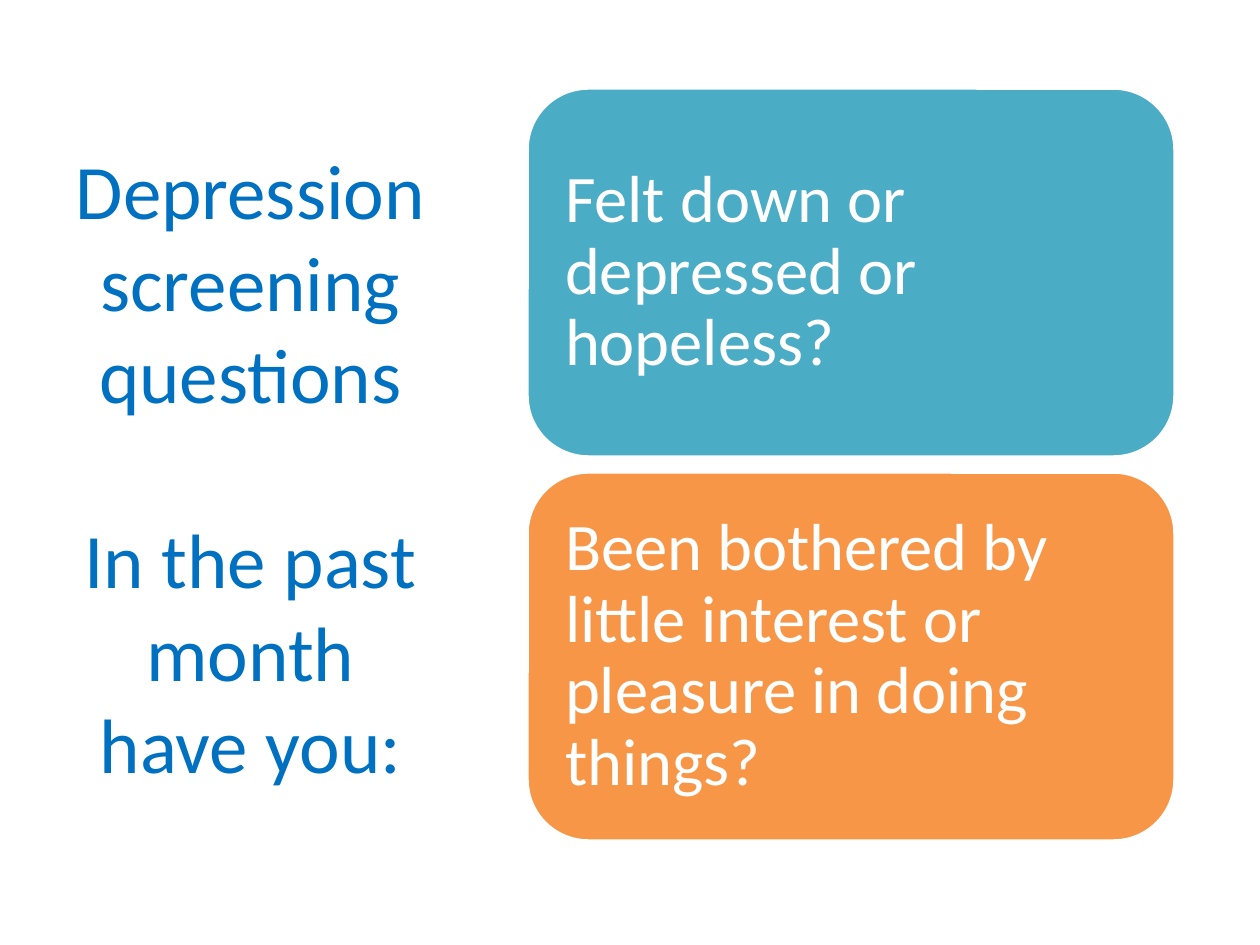
"""Build the depression screening questions slide."""
from dataclasses import dataclass

from pptx import Presentation
from pptx.dml.color import RGBColor
from pptx.enum.shapes import MSO_SHAPE
from pptx.enum.text import MSO_ANCHOR, MSO_AUTO_SIZE, PP_ALIGN
from pptx.slide import Slide
from pptx.text.text import TextFrame, _Paragraph
from pptx.util import Emu, Pt

EMU_PER_PX = 914400 / 126
FONT = "Calibri"
COLORS = {"title": "0070C0", "teal": "4BACC6", "orange": "F79646", "white": "FFFFFF"}
TITLE_LINES = ["Depression screening questions", "In the past month have you:"]
CARD_LEFT, CARD_TOP, CARD_WIDTH, CARD_HEIGHT, CARD_GAP = 527, 88, 648, 369, 15


@dataclass(frozen=True)
class QuestionCard:
    text: str
    color: str


CARDS = [
    QuestionCard("Felt down or depressed or hopeless?", "teal"),
    QuestionCard("Been bothered by little interest or pleasure in doing things?", "orange"),
]


def px(length: int) -> Emu:
    return Emu(round(length * EMU_PER_PX))


def rgb(name: str) -> RGBColor:
    return RGBColor.from_string(COLORS[name])


def format_frame(frame: TextFrame, inset: int) -> None:
    frame.word_wrap = True
    frame.auto_size = MSO_AUTO_SIZE.NONE
    frame.vertical_anchor = MSO_ANCHOR.MIDDLE
    frame.margin_left = frame.margin_right = px(inset)
    frame.margin_top = frame.margin_bottom = px(inset)


def add_text(paragraph: _Paragraph, text: str, size: int, color: str, alignment: PP_ALIGN) -> None:
    paragraph.alignment = alignment
    run = paragraph.add_run()
    run.text = text
    run.font.name = FONT
    run.font.size = Pt(size)
    run.font.color.rgb = rgb(color)


def fill_title(slide: Slide) -> None:
    title = slide.shapes.title
    title.left, title.top, title.width, title.height = px(54), px(86), px(393), px(759)
    frame = title.text_frame
    format_frame(frame, 14)
    for index, line in enumerate(TITLE_LINES):
        paragraph = frame.add_paragraph() if index else frame.paragraphs[0]
        paragraph.space_before = Pt(53 * index)
        add_text(paragraph, line, 44, "title", PP_ALIGN.CENTER)


def add_card(slide: Slide, card: QuestionCard, top: int) -> None:
    shape = slide.shapes.add_shape(
        MSO_SHAPE.ROUNDED_RECTANGLE, px(CARD_LEFT), px(top), px(CARD_WIDTH), px(CARD_HEIGHT)
    )
    shape.shadow.inherit = False
    shape.fill.solid()
    shape.fill.fore_color.rgb = rgb(card.color)
    shape.line.color.rgb = rgb("white")
    shape.line.width = Pt(2)
    format_frame(shape.text_frame, 20)
    paragraph = shape.text_frame.paragraphs[0]
    paragraph.line_spacing = 0.9
    add_text(paragraph, card.text, 38, "white", PP_ALIGN.LEFT)


def main() -> None:
    presentation = Presentation()
    presentation.slide_width, presentation.slide_height = px(1260), px(945)
    slide = presentation.slides.add_slide(presentation.slide_layouts[5])
    fill_title(slide)
    for index, card in enumerate(CARDS):
        add_card(slide, card, CARD_TOP + index * (CARD_HEIGHT + CARD_GAP))
    presentation.save("out.pptx")


if __name__ == "__main__":
    main()
